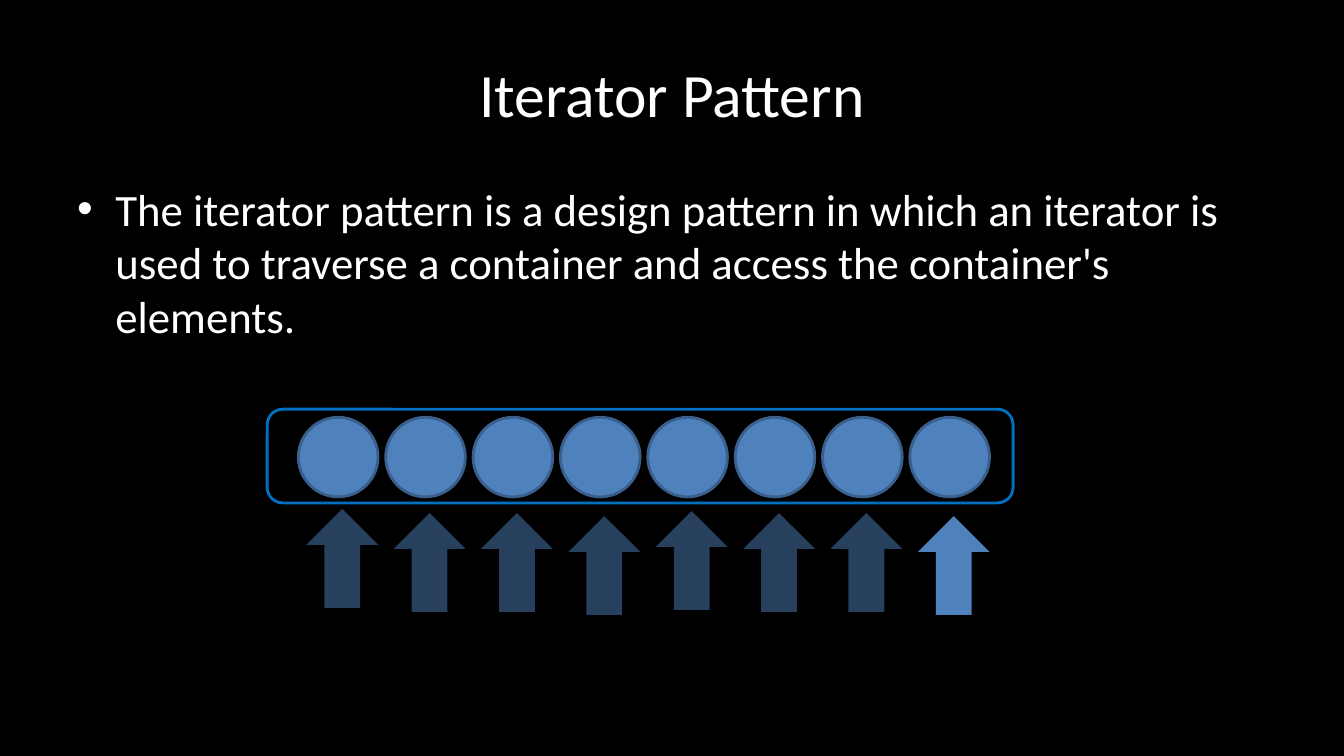
from dataclasses import dataclass

from lxml import etree
from pptx import Presentation
from pptx.dml.color import RGBColor
from pptx.enum.shapes import MSO_SHAPE
from pptx.enum.text import MSO_ANCHOR, PP_ALIGN
from pptx.oxml.ns import qn
from pptx.shapes.autoshape import Shape
from pptx.slide import Slide
from pptx.text.text import _Paragraph
from pptx.util import Inches, Pt

OVAL, ARROW, ROUNDED = MSO_SHAPE.OVAL, MSO_SHAPE.UP_ARROW, MSO_SHAPE.ROUNDED_RECTANGLE
TOP, MIDDLE = MSO_ANCHOR.TOP, MSO_ANCHOR.MIDDLE
LEFT, CENTER = PP_ALIGN.LEFT, PP_ALIGN.CENTER
WIDTH, HEIGHT = Inches(13.333), Inches(7.5)


@dataclass(frozen=True)
class Theme:
    background: str = "000000"
    text: str = "FFFFFF"
    element: str = "4F81BD"
    element_edge: str = "3A5F8C"
    container_edge: str = "0070C0"
    font: str = "Calibri"
    title_size: int = 44
    body_size: int = 32
    line_width: int = 2
    faded_alpha: int = 50


@dataclass(frozen=True)
class Area:
    """A rectangle in percent of the slide's width and height."""
    left: float
    top: float
    width: float
    height: float


@dataclass(frozen=True)
class Figure:
    kind: MSO_SHAPE
    area: Area
    fill: str | None = None
    edge: str | None = None
    alpha: int = 100


THEME = Theme()
TITLE_AREA = Area(5, 4, 90, 16.67)
BODY_AREA = Area(5, 23.33, 90, 66)
CONTAINER_AREA = Area(19.88, 54.13, 55.5, 12.4)
PITCH = 6.5  # distance between neighbouring elements
ARROW_TOPS = (67.33, 67.87, 67.87, 68.27, 67.6, 67.87, 67.87, 68.27)


def place(area: Area) -> tuple[int, int, int, int]:
    return (int(WIDTH * area.left / 100), int(HEIGHT * area.top / 100),
            int(WIDTH * area.width / 100), int(HEIGHT * area.height / 100))


def add_text(page: Slide, area: Area, text: str, size: int,
             align: PP_ALIGN, anchor: MSO_ANCHOR, bullet: bool = False) -> None:
    frame = page.shapes.add_textbox(*place(area)).text_frame
    frame.word_wrap = True
    frame.vertical_anchor = anchor
    frame.text = text
    para = frame.paragraphs[0]
    para.alignment = align
    if bullet:
        add_bullet(para)
    font = para.runs[0].font
    font.name, font.size = THEME.font, Pt(size)
    font.color.rgb = RGBColor.from_string(THEME.text)


def add_bullet(para: _Paragraph) -> None:
    properties = para._p.get_or_add_pPr()
    indent = Inches(0.38)
    properties.set("marL", str(indent))
    properties.set("indent", str(-indent))
    etree.SubElement(properties, qn("a:buFont")).set("typeface", "Arial")
    etree.SubElement(properties, qn("a:buChar")).set("char", "•")


def add_figure(page: Slide, figure: Figure) -> Shape:
    shape = page.shapes.add_shape(figure.kind, *place(figure.area))
    shape.shadow.inherit = False
    if figure.fill:
        shape.fill.solid()
        shape.fill.fore_color.rgb = RGBColor.from_string(figure.fill)
    else:
        shape.fill.background()
    if figure.edge:
        shape.line.color.rgb = RGBColor.from_string(figure.edge)
        shape.line.width = Pt(THEME.line_width)
    else:
        shape.line.fill.background()
    if figure.alpha < 100:
        color = shape._element.spPr.find(qn("a:solidFill"))[0]
        etree.SubElement(color, qn("a:alpha")).set("val", str(figure.alpha * 1000))
    return shape


def main() -> None:
    deck = Presentation()
    deck.slide_width, deck.slide_height = WIDTH, HEIGHT
    page = deck.slides.add_slide(deck.slide_layouts[6])
    page.background.fill.solid()
    page.background.fill.fore_color.rgb = RGBColor.from_string(THEME.background)

    # Title and definition
    add_text(page, TITLE_AREA, "Iterator Pattern", THEME.title_size, CENTER, MIDDLE)
    add_text(page, BODY_AREA,
             "The iterator pattern is a design pattern in which an iterator is used "
             "to traverse a container and access the container's elements.",
             THEME.body_size, LEFT, TOP, bullet=True)

    # Elements, each with the iterator below it; only the last position is solid
    last = len(ARROW_TOPS) - 1
    for index, arrow_top in enumerate(ARROW_TOPS):
        shift = index * PITCH
        add_figure(page, Figure(OVAL, Area(22.2 + shift, 55.2, 5.93, 10.53),
                                THEME.element, THEME.element_edge))
        add_figure(page, Figure(ARROW, Area(22.8 + shift, arrow_top, 5.33, 13.07),
                                THEME.element,
                                alpha=100 if index == last else THEME.faded_alpha))

    # Container outline
    add_figure(page, Figure(ROUNDED, CONTAINER_AREA, edge=THEME.container_edge))

    deck.save("out.pptx")


if __name__ == "__main__":
    main()
